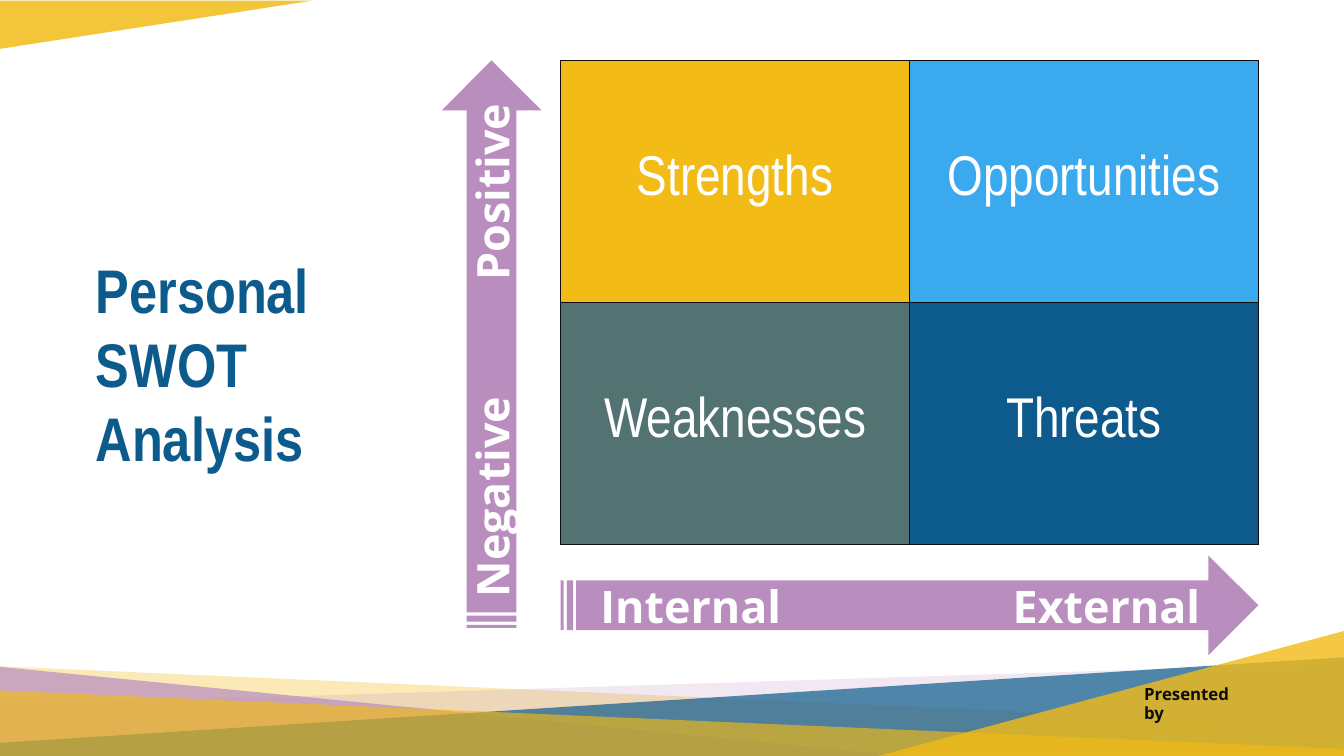
from dataclasses import dataclass
from typing import Any

from lxml import etree
from pptx import Presentation
from pptx.dml.color import RGBColor
from pptx.enum.shapes import MSO_SHAPE
from pptx.enum.text import MSO_ANCHOR, MSO_AUTO_SIZE, PP_ALIGN
from pptx.oxml.ns import qn
from pptx.util import Pt

TRIANGLE = MSO_SHAPE.ISOSCELES_TRIANGLE
STRIPED_ARROW = MSO_SHAPE.STRIPED_RIGHT_ARROW
TOP, MIDDLE = MSO_ANCHOR.TOP, MSO_ANCHOR.MIDDLE
NO_FIT = MSO_AUTO_SIZE.NONE
LEFT, CENTER = PP_ALIGN.LEFT, PP_ALIGN.CENTER

PX = 9144
PAGE_WIDTH, PAGE_HEIGHT = 1333, 750
NARROW, SANS = "Arial Narrow", "Open Sans"

YELLOW = RGBColor(0xF2, 0xBB, 0x16)
PURPLE = RGBColor(0xB9, 0x8E, 0xBF)
NAVY = RGBColor(0x0D, 0x5B, 0x8C)
SKY = RGBColor(0x3B, 0xA9, 0xED)
SAGE = RGBColor(0x53, 0x73, 0x73)
INK = RGBColor(0x0D, 0x0D, 0x0D)
WHITE = RGBColor(0xFF, 0xFF, 0xFF)


@dataclass(frozen=True)
class Band:
    left_top: int
    left_bottom: int
    right_top: int
    right_bottom: int
    color: RGBColor
    opacity: int


@dataclass(frozen=True)
class Wedge:
    left: int
    top: int
    width: int
    height: int
    rotation: int
    apex: int
    color: RGBColor
    opacity: int


@dataclass(frozen=True)
class AxisArrow:
    left: int
    top: int
    length: int
    rotation: int
    low: str
    high: str
    inset: int
    tab: int


@dataclass(frozen=True)
class Quadrant:
    row: int
    column: int
    label: str
    color: RGBColor


BACKDROP = [
    Band(661, 748, 720, 748, YELLOW, 30),
    Band(700, 748, 658, 748, PURPLE, 20),
    Wedge(0, 661, 902, 89, 90, 1, PURPLE, 72),
    Band(737, 750, 652, 750, NAVY, 70),
    Band(685, 750, 743, 750, YELLOW, 65),
    Wedge(871, 626, 462, 124, 270, 0, YELLOW, 80),
    Wedge(0, 0, 311, 48, 90, 0, YELLOW, 85),
]
QUADRANTS = [
    Quadrant(0, 0, "Strengths", YELLOW),
    Quadrant(0, 1, "Opportunities", SKY),
    Quadrant(1, 0, "Weaknesses", SAGE),
    Quadrant(1, 1, "Threats", NAVY),
]
AXES = [
    AxisArrow(556, 551, 692, 0, "Internal", "External", 24, 409),
    AxisArrow(206, 292, 563, 270, "Negative", "Positive", 15, 314),
]
ARROW_THICKNESS = 99


def apply_format(target: Any, values: dict[str, Any]) -> None:
    for name, value in values.items():
        setattr(target, name, value)


def write_text(para: Any, text: str, font: str, size: int, color: RGBColor, bold: bool) -> None:
    span = para.add_run()
    span.text = text
    apply_format(span.font, {"name": font, "size": Pt(size), "bold": bold})
    span.font.color.rgb = color


def paint(shape: Any, color: RGBColor, opacity: int = 100) -> None:
    shape.shadow.inherit = False
    shape.fill.solid()
    shape.fill.fore_color.rgb = color
    shape.line.fill.background()
    if opacity < 100:
        tint = shape.fill._xPr.find(qn("a:solidFill"))[0]
        etree.SubElement(tint, qn("a:alpha"), val=str(opacity * 1000))


def draw_band(page: Any, band: Band) -> None:
    outline = page.shapes.build_freeform(0, band.left_top, scale=PX)
    outline.add_line_segments([
        (PAGE_WIDTH, band.right_top),
        (PAGE_WIDTH, band.right_bottom),
        (0, band.left_bottom),
    ])
    paint(outline.convert_to_shape(), band.color, band.opacity)


def draw_wedge(page: Any, wedge: Wedge) -> None:
    shift = (wedge.width - wedge.height) // 2
    shape = page.shapes.add_shape(
        TRIANGLE, (wedge.left + shift) * PX, (wedge.top - shift) * PX,
        wedge.height * PX, wedge.width * PX)
    shape.rotation = wedge.rotation
    shape.adjustments[0] = wedge.apex
    paint(shape, wedge.color, wedge.opacity)


def draw_title(page: Any) -> None:
    title = page.shapes.title
    apply_format(title, {"left": 85 * PX, "top": 245 * PX, "width": 265 * PX, "height": 144 * PX})
    apply_format(title.text_frame,
                 {"word_wrap": True, "auto_size": NO_FIT, "vertical_anchor": TOP})
    para = title.text_frame.paragraphs[0]
    para.alignment = LEFT
    write_text(para, "Personal SWOT Analysis", NARROW, 44, NAVY, True)


def draw_presenter(page: Any) -> None:
    box = page.shapes.add_textbox(1125 * PX, 676 * PX, 122 * PX, 28 * PX)
    box.text_frame.word_wrap = True
    para = box.text_frame.paragraphs[0]
    para.line_spacing = 0.9
    write_text(para, "Presented by", SANS, 12, INK, True)


def add_borders(cell: Any) -> None:
    properties = cell._tc.get_or_add_tcPr()
    for side in ("lnL", "lnR", "lnT", "lnB"):
        border = etree.SubElement(properties, qn(f"a:{side}"), w=str(Pt(1)))
        fill = etree.SubElement(border, qn("a:solidFill"))
        etree.SubElement(fill, qn("a:srgbClr"), val=str(INK))


def draw_matrix(page: Any) -> None:
    table = page.shapes.add_table(2, 2, 556 * PX, 60 * PX, 692 * PX, 480 * PX).table
    apply_format(table, {"first_row": False, "horz_banding": False})
    for quadrant in QUADRANTS:
        cell = table.cell(quadrant.row, quadrant.column)
        add_borders(cell)
        cell.fill.solid()
        cell.fill.fore_color.rgb = quadrant.color
        cell.vertical_anchor = MIDDLE
        para = cell.text_frame.paragraphs[0]
        para.alignment = CENTER
        write_text(para, quadrant.label, NARROW, 40, WHITE, False)


def draw_axis(page: Any, axis: AxisArrow) -> None:
    arrow = page.shapes.add_shape(
        STRIPED_ARROW, axis.left * PX, axis.top * PX, axis.length * PX, ARROW_THICKNESS * PX)
    arrow.rotation = axis.rotation
    paint(arrow, PURPLE)
    apply_format(arrow.text_frame, {
        "word_wrap": True, "vertical_anchor": MIDDLE,
        "margin_left": axis.inset * PX, "margin_right": 0})
    para = arrow.text_frame.paragraphs[0]
    para.alignment = LEFT
    tabs = etree.SubElement(para._p.get_or_add_pPr(), qn("a:tabLst"))
    etree.SubElement(tabs, qn("a:tab"), pos=str(axis.tab * PX), algn="l")
    write_text(para, f"{axis.low}\t{axis.high}", SANS, 32, WHITE, True)


def main() -> None:
    deck = Presentation()
    apply_format(deck, {"slide_width": PAGE_WIDTH * PX, "slide_height": PAGE_HEIGHT * PX})
    page = deck.slides.add_slide(deck.slide_layouts.get_by_name("Title Only"))
    for piece in BACKDROP:
        if isinstance(piece, Band):
            draw_band(page, piece)
        else:
            draw_wedge(page, piece)
    draw_presenter(page)
    draw_title(page)
    draw_matrix(page)
    for axis in AXES:
        draw_axis(page, axis)
    deck.save("out.pptx")


if __name__ == "__main__":
    main()
